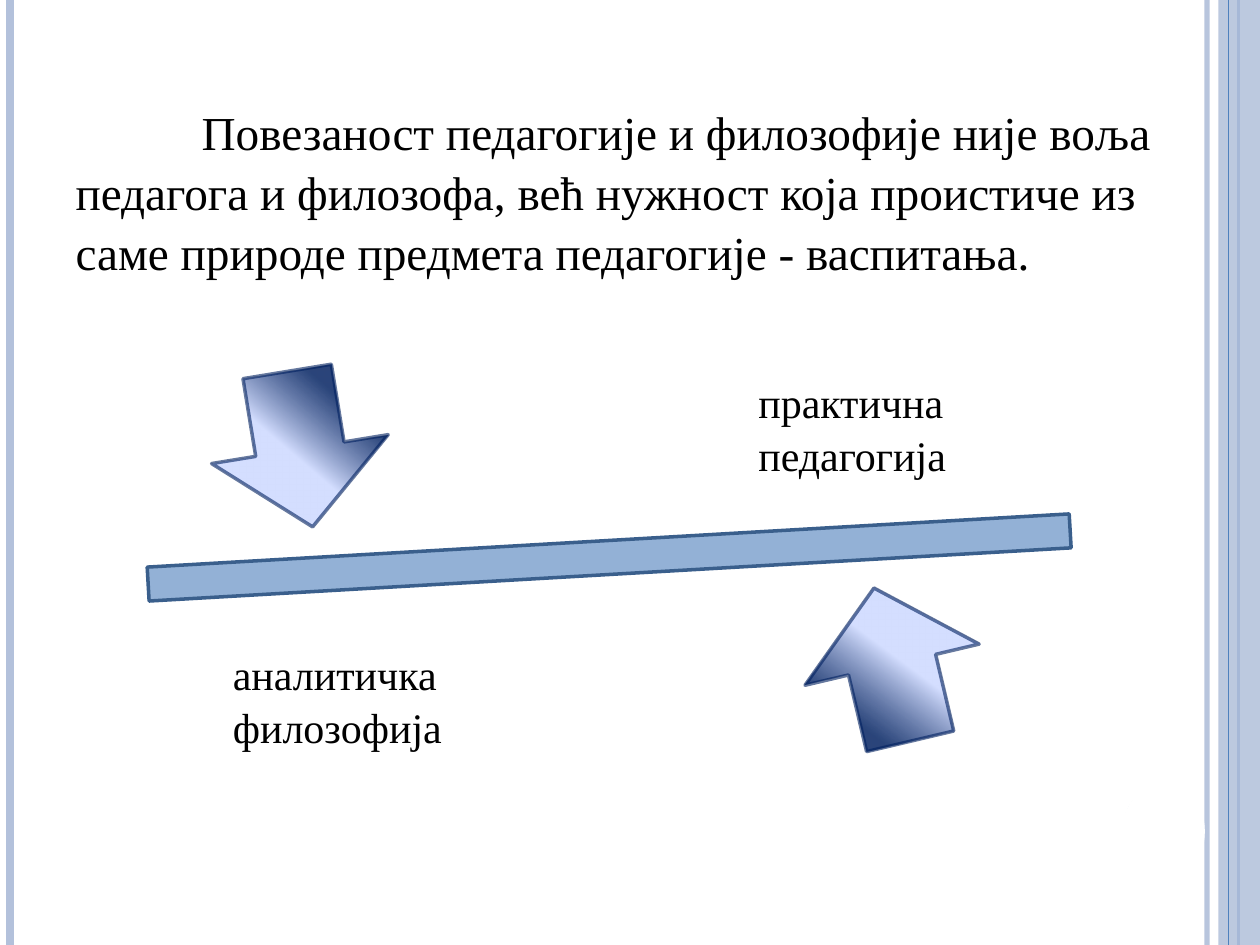
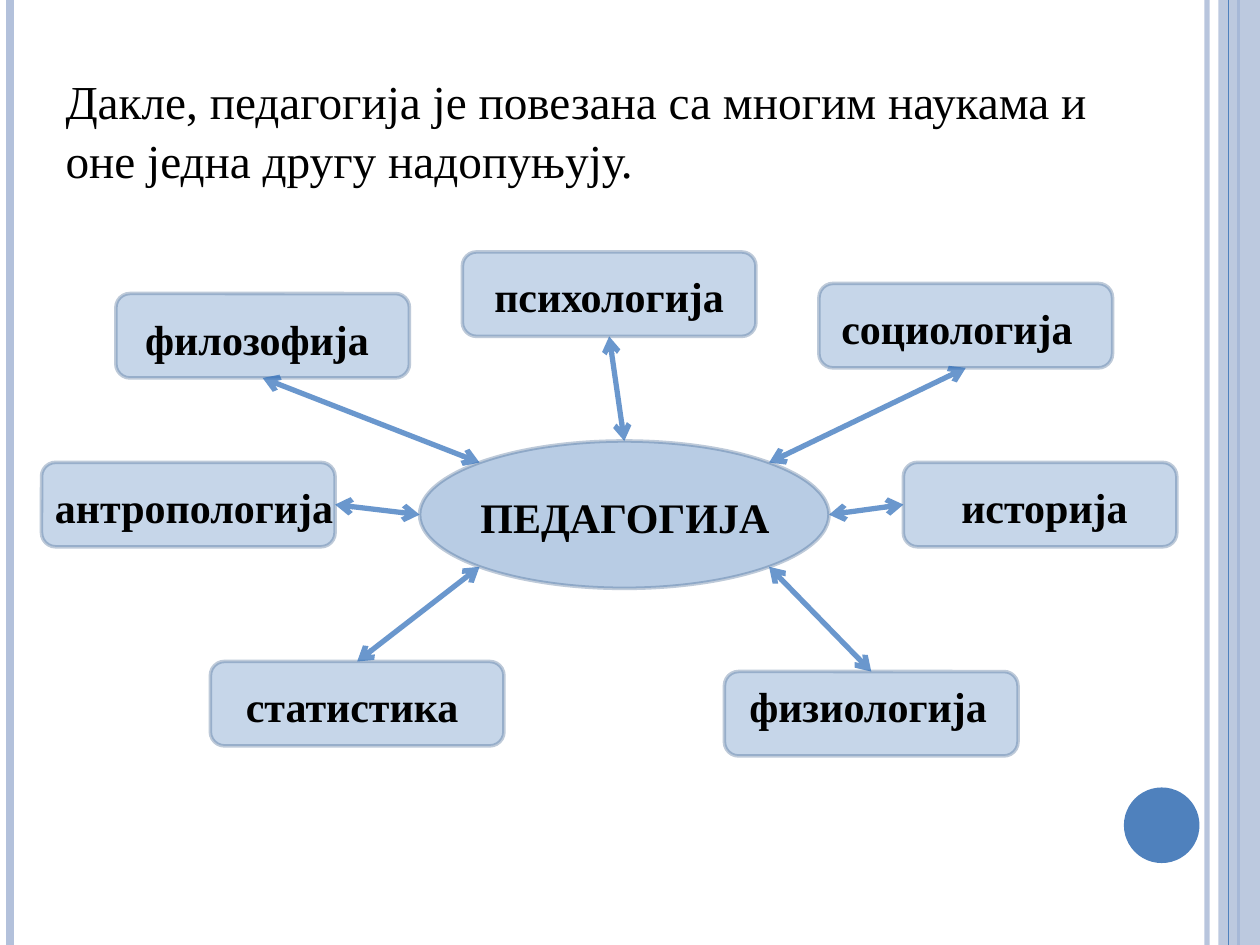
from dataclasses import dataclass
from math import cos, radians, sin

from lxml.etree import SubElement
from pptx import Presentation
from pptx.dml.color import RGBColor
from pptx.enum.shapes import MSO_CONNECTOR as Connector, MSO_SHAPE as Shape
from pptx.enum.text import MSO_ANCHOR as Anchor, MSO_AUTO_SIZE as AutoSize, PP_ALIGN as Align
from pptx.oxml.ns import qn
from pptx.util import Inches, Pt


@dataclass(frozen=True)
class Theme:
    font: str = "Times New Roman"
    statement_size: int = 27
    label_size: int = 24
    line_spacing: float = 1.05
    text: str = "000000"
    paper: str = "FFFFFF"
    accent: str = "4F81BD"
    pale: str = "B3C1DB"
    outline: str = "3A5F8C"
    navy: str = "002060"
    link: str = "2C6CB9"
    arrow_stops: tuple = ((26, "002060", 83), (53, "D4DEFF", 100),
                          (83, "D4DEFF", 100), (100, "96AB94", 100))


TOP, LEFT, BOTTOM, RIGHT = range(4)
NODE_HEIGHT = 0.67
HUB = (3.33, 3.5, 3.25, 1.17)

SCIENCES = (
    ("филозофија", (0.92, 2.33, 2.33), (1, 2.42, 2.08), BOTTOM, 225),
    ("психологија", (3.67, 2, 2.33), None, BOTTOM, 270),
    ("социологија", (6.5, 2.25, 2.33), (6.5, 2.33, 2.19), BOTTOM, 315),
    ("историја", (7.17, 3.67, 2.17), (7.25, 3.75, 2.08), LEFT, 0),
    ("физиологија", (5.75, 5.33, 2.33), (5.66, 5.33, 2.46), TOP, 45),
    ("статистика", (1.67, 5.25, 2.33), (1.71, 5.33, 2.17), TOP, 135),
    ("антропологија", (0.33, 3.67, 2.33), (0.33, 3.75, 2.42), RIGHT, 180),
)


def apply(target, values):
    for name, value in values.items():
        setattr(target, name, value)


def inches(values):
    return [Inches(value) for value in values]


def set_alpha(color, percent):
    if percent < 100:
        SubElement(color, qn("a:alpha"), val=str(percent * 1000))


class Deck:
    def __init__(self, theme):
        self.theme = theme
        self.presentation = Presentation()
        apply(self.presentation, {"slide_width": Inches(10), "slide_height": Inches(7.5)})
        self.layout = self.presentation.slide_layouts[5]
        self.slide = None

    def new_slide(self):
        self.slide = self.presentation.slides.add_slide(self.layout)

    def share(self, shapes):
        for shape in shapes:
            self.layout.shapes.element.append(shape.element)

    def set_text(self, frame, text, size, bold=False, align=Align.LEFT):
        paragraph = frame.paragraphs[0]
        paragraph.text = text
        apply(paragraph, {"alignment": align, "line_spacing": self.theme.line_spacing})
        font = paragraph.runs[0].font
        apply(font, {"name": self.theme.font, "size": Pt(size), "bold": bold})
        font.color.rgb = RGBColor.from_string(self.theme.text)

    def statement(self, text, box, indent=0):
        title = self.slide.shapes.title
        apply(title, dict(zip(("left", "top", "width", "height"), inches(box))))
        apply(title.text_frame, {"word_wrap": True, "vertical_anchor": Anchor.TOP,
                                 "auto_size": AutoSize.SHAPE_TO_FIT_TEXT})
        self.set_text(title.text_frame, text, self.theme.statement_size)
        title.element.xpath(".//a:pPr")[0].set("indent", str(Inches(indent)))

    def label(self, text, box, **style):
        frame = self.slide.shapes.add_textbox(*inches(box)).text_frame
        apply(frame, {"word_wrap": True, "auto_size": AutoSize.SHAPE_TO_FIT_TEXT})
        self.set_text(frame, text, self.theme.label_size, **style)

    def stroke(self, shape, color, width, alpha=100):
        shape.line.color.rgb = RGBColor.from_string(color)
        shape.line.width = Pt(width)
        set_alpha(shape.element.spPr.xpath("a:ln/a:solidFill/a:srgbClr")[0], alpha)

    def shape(self, kind, box, fill=None, alpha=100, line=None, rotation=0):
        shape = self.slide.shapes.add_shape(kind, *inches(box))
        shape.shadow.inherit = False
        shape.rotation = rotation
        if fill:
            shape.fill.solid()
            shape.fill.fore_color.rgb = RGBColor.from_string(fill)
            set_alpha(shape.element.spPr.xpath("a:solidFill/a:srgbClr")[0], alpha)
        if line:
            self.stroke(shape, *line)
        else:
            shape.line.fill.background()
        return shape

    def block_arrow(self, box, rotation):
        arrow = self.shape(Shape.DOWN_ARROW, box, rotation=rotation,
                           line=(self.theme.navy, 2, 60))
        arrow.fill.gradient()
        arrow.fill.gradient_angle = 220
        stops = arrow.element.spPr.xpath("a:gradFill/a:gsLst")[0]
        for stop in list(stops):
            stops.remove(stop)
        for position, color, alpha in self.theme.arrow_stops:
            stop = SubElement(stops, qn("a:gs"), pos=str(position * 1000))
            set_alpha(SubElement(stop, qn("a:srgbClr"), val=color), alpha)

    def line(self, start, end, color, width, alpha=100):
        line = self.slide.shapes.add_connector(Connector.STRAIGHT, *inches(start + end))
        self.stroke(line, color, width, alpha)
        SubElement(line.element.spPr, qn("a:effectLst"))
        return line

    def link(self, node, site, end):
        line = self.line(end, end, self.theme.link, 3, 70)
        line.begin_connect(node, site)
        outline = line.element.spPr.xpath("a:ln")[0]
        for tag in ("a:headEnd", "a:tailEnd"):
            SubElement(outline, qn(tag), type="arrow")


def add_frame(deck):
    theme = deck.theme

    def stripe(x, color, width, alpha=100):
        return deck.line((x, 0), (x, 7.5), color, width, alpha)

    deck.share([
        stripe(9.58, theme.pale, 3, 93),
        stripe(0.08, theme.pale, 4.5),
        stripe(9.83, theme.accent, 1.5),
        deck.shape(Shape.RECTANGLE, (9.67, 0, 0.33, 7.5), theme.pale, 87),
        stripe(9.75, theme.accent, 0.75),
        deck.shape(Shape.OVAL, (8.92, 6.25, 0.6, 0.6), theme.accent),
    ])


def add_balance(deck):
    theme = deck.theme
    deck.shape(Shape.OVAL, (8.89, 6.21, 0.67, 0.83), theme.paper, rotation=9)
    deck.statement(
        "Повезаност педагогије и филозофије није воља педагога и филозофа, већ нужност "
        "која проистиче из саме природе предмета педагогије - васпитања.",
        (0.5, 0.75, 9.25, 1.46), indent=1)
    deck.block_arrow((1.67, 2.94, 1.42, 1.25), 350.7)
    deck.block_arrow((6.37, 4.65, 1.42, 1.25), 166.7)
    deck.label("аналитичка филозофија", (1.75, 5.08, 2.83, 0.91))
    deck.shape(Shape.RECTANGLE, (1.17, 4.29, 7.33, 0.27), theme.accent, 61,
               (theme.outline, 2), 356.7)
    deck.label("практична педагогија", (5.92, 2.92, 2.17, 0.91))


def add_sciences(deck):
    theme = deck.theme
    deck.statement("Дакле, педагогија је повезана са многим наукама и оне једна другу "
                   "надопуњују.", (0.42, 0.5, 8.58, 1.01))
    style = {"bold": True, "align": Align.CENTER}
    deck.shape(Shape.OVAL, HUB, theme.accent, 40, (theme.outline, 2, 33))
    deck.label("ПЕДАГОГИЈА", (3.5, 3.83, 2.92, 0.5), **style)
    left, top, width, height = HUB
    for name, node_box, label_box, site, angle in SCIENCES:
        node = deck.shape(Shape.ROUNDED_RECTANGLE, (*node_box, NODE_HEIGHT), theme.accent, 32,
                          (theme.outline, 2, 32))
        if label_box:
            deck.label(name, (*label_box, 0.5), **style)
        else:
            node.text_frame.vertical_anchor = Anchor.MIDDLE
            deck.set_text(node.text_frame, name, theme.label_size, **style)
        rim = (left + width / 2 * (1 + cos(radians(angle))),
               top + height / 2 * (1 + sin(radians(angle))))
        deck.link(node, site, rim)


def main():
    deck = Deck(Theme())
    deck.new_slide()
    add_frame(deck)
    add_balance(deck)
    deck.new_slide()
    add_sciences(deck)
    deck.presentation.save("out.pptx")


if __name__ == "__main__":
    main()
